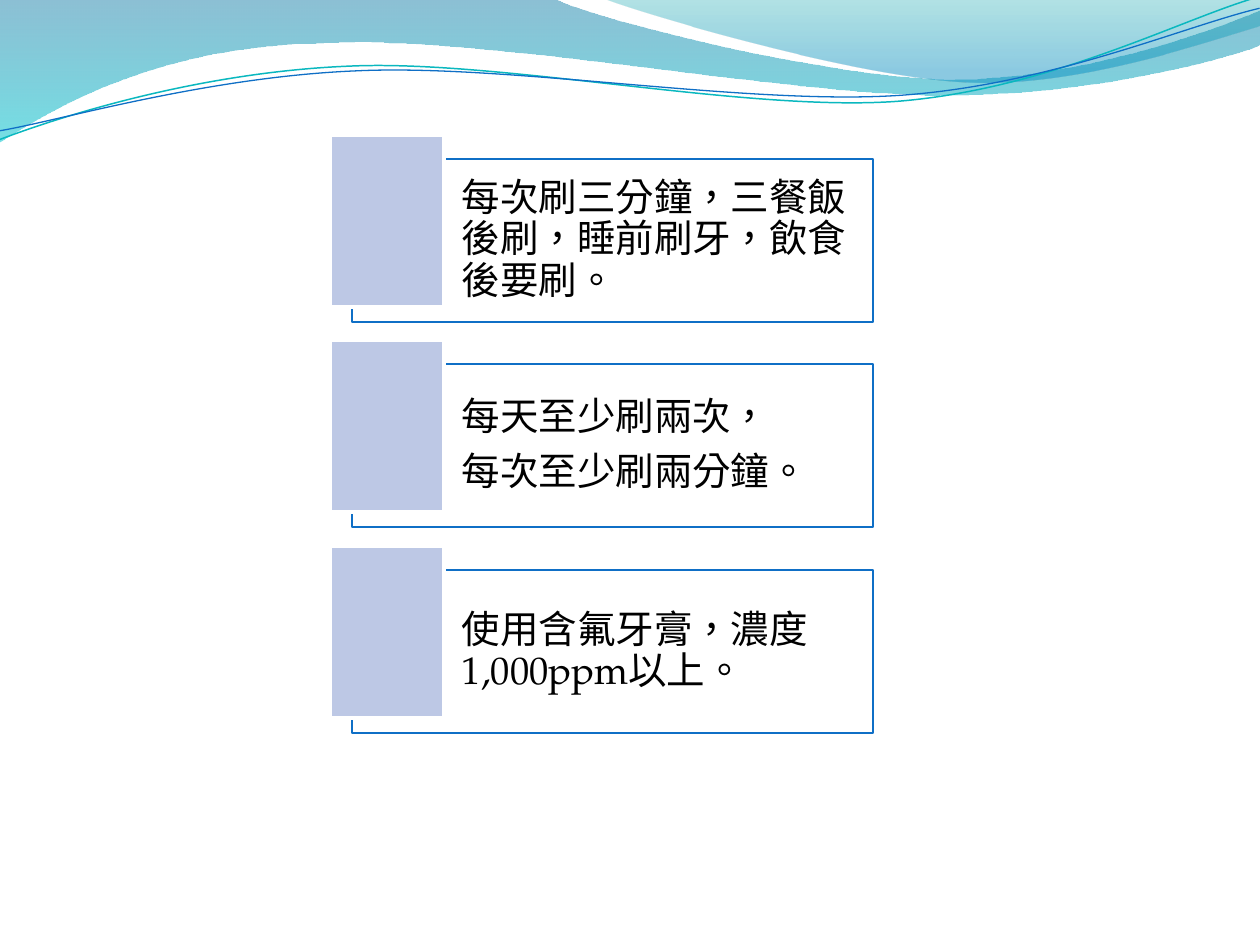
from lxml.etree import SubElement
from pptx import Presentation
from pptx.dml.color import RGBColor
from pptx.enum.lang import MSO_LANGUAGE_ID
from pptx.enum.shapes import MSO_SHAPE
from pptx.enum.text import MSO_ANCHOR, PP_ALIGN
from pptx.oxml.ns import qn
from pptx.util import Pt

PX = 914400 / 126
FONT = "TeX Gyre Pagella"
C = {"blue": "0F6FC6", "aqua": "0AB8BF", "white": "FFFFFF", "black": "000000", "tile": "BDC8E5",
     "navy": "0074A1", "cyan": "00C6CF", "teal": "00A1A9", "sky": "008BBF"}

# Each step is a line to one point or a cubic curve through three.
WAVE = [(0, 0), (554, -1), (600, 21, 837, 79, 955, 79), (1075, 79, 1207, 33, 1260, 11),
        (1261, 45), (1239, 55, 1096, 96, 940, 95), (784, 95, 481, 35, 324, 43),
        (163, 45, 58, 105, -1, 142), (0, 0)]
CREST = [(604, -1), (641, 14, 859, 78, 969, 82), (1079, 87, 1211, 40, 1260, 26), (1260, 0)]
AQUA_LINE = [(-3, 110), (58, 90, 199, 52, 350, 53), (499, 53, 745, 118, 896, 114),
             (1049, 109, 1184, 45, 1260, 27)]
BLUE_LINE = [(-2, 101), (57, 94, 207, 57, 357, 58), (509, 58, 750, 112, 902, 108),
             (1052, 104, 1187, 52, 1262, 38)]
TIPS = [["每次刷三分鐘，三餐飯後刷，睡前刷牙，飲食後要刷。"],
        ["每天至少刷兩次，", "每次至少刷兩分鐘。"],
        ["使用含氟牙膏，濃度1,000ppm以上。"]]


def px(n):
    """Turn px into EMU."""
    return round(n * PX)


def rgb(name):
    """Look up a named colour."""
    return RGBColor.from_string(C[name])


def set_alpha(color_el, percent):
    """Give a colour element an opacity."""
    SubElement(color_el, qn("a:alpha")).set("val", str(percent * 1000))


def set_line(sp, color, width):
    """Outline a shape."""
    sp.line.color.rgb = rgb(color)
    sp.line.width = Pt(width)


def add_curve(s, steps, x, y, close):
    """Draw an outline of lines and cubic curves offset by x and y."""
    pts = [(px(x + step[i]), px(y + step[i + 1]))
           for step in steps for i in range(0, len(step), 2)]
    fb = s.shapes.build_freeform(*pts[0])
    fb.add_line_segments(pts[1:], close=close)
    sp = fb.convert_to_shape()
    sp.shadow.inherit = False
    segments = iter(list(sp.element.spPr.iter(qn("a:lnTo"))))
    for step in steps[1:]:
        first = next(segments)
        if len(step) == 6:
            curve = SubElement(first.getparent(), qn("a:cubicBezTo"))
            first.addprevious(curve)
            for seg in (first, next(segments), next(segments)):
                curve.append(seg[0])
                seg.getparent().remove(seg)
    return sp


def add_header(s, x, y):
    """Draw the translucent waves and the two thin lines."""
    for steps, stops in ((WAVE, [(0, "navy", 45), (1, "cyan", 55)]),
                         (CREST, [(0, "teal", 30), (0.8, "sky", 45)])):
        sp = add_curve(s, steps, x, y, True)
        sp.line.fill.background()
        sp.fill.gradient()
        sp.fill.gradient_angle = 270
        for stop, (pos, color, _) in zip(sp.fill.gradient_stops, stops):
            stop.position = pos
            stop.color.rgb = rgb(color)
        for el, (_, _, alpha) in zip(sp.element.spPr.iter(qn("a:srgbClr")), stops):
            set_alpha(el, alpha)
    for steps, color, width in ((AQUA_LINE, "aqua", 0.85), (BLUE_LINE, "blue", 0.75)):
        sp = add_curve(s, steps, x, y, False)
        sp.rotation = 357.3
        sp.fill.background()
        set_line(sp, color, width)


def add_text(p, text, size=22, color="black", font=FONT, spacing=0.9, after=7.7):
    """Fill a paragraph with one formatted run."""
    p.alignment = PP_ALIGN.LEFT
    p.line_spacing = spacing
    p.space_after = Pt(after)
    r = p.add_run()
    r.text = text
    r.font.size = Pt(size)
    r.font.name = font
    r.font.color.rgb = rgb(color)
    r.font.language_id = MSO_LANGUAGE_ID.TRADITIONAL_CHINESE


def add_rect(s, x, y, w, h, fill, line, width):
    """Draw a filled and outlined rectangle."""
    sp = s.shapes.add_shape(MSO_SHAPE.RECTANGLE, px(x), px(y), px(w), px(h))
    sp.shadow.inherit = False
    sp.fill.solid()
    sp.fill.fore_color.rgb = rgb(fill)
    set_line(sp, line, width)
    return sp


def add_tip(s, x, y, w, h, lines):
    """Draw a tip card with a tile over its top left corner."""
    sp = add_rect(s, x, y, w, h, "white", "blue", 0.75)
    set_alpha(next(sp.element.spPr.iter(qn("a:srgbClr"))), 40)
    tf = sp.text_frame
    tf.word_wrap = True
    tf.vertical_anchor = MSO_ANCHOR.MIDDLE
    tf.margin_left = px(110)
    tf.margin_top = tf.margin_right = tf.margin_bottom = px(11)
    for i, line in enumerate(lines):
        add_text(tf.add_paragraph() if i else tf.paragraphs[0], line)
    add_rect(s, x - 22, y - 24, 114, 172, "tile", "white", 2)


def main():
    """Build the slide and save it."""
    prs = Presentation()
    prs.slide_width, prs.slide_height = px(1260), px(945)
    s = prs.slides.add_slide(prs.slide_layouts[6])
    add_header(s, 0, 0)
    for i, lines in enumerate(TIPS):
        add_tip(s, 352, 159 + round(205.4 * i), 521, 163, lines)
    prs.save("out.pptx")


if __name__ == "__main__":
    main()
